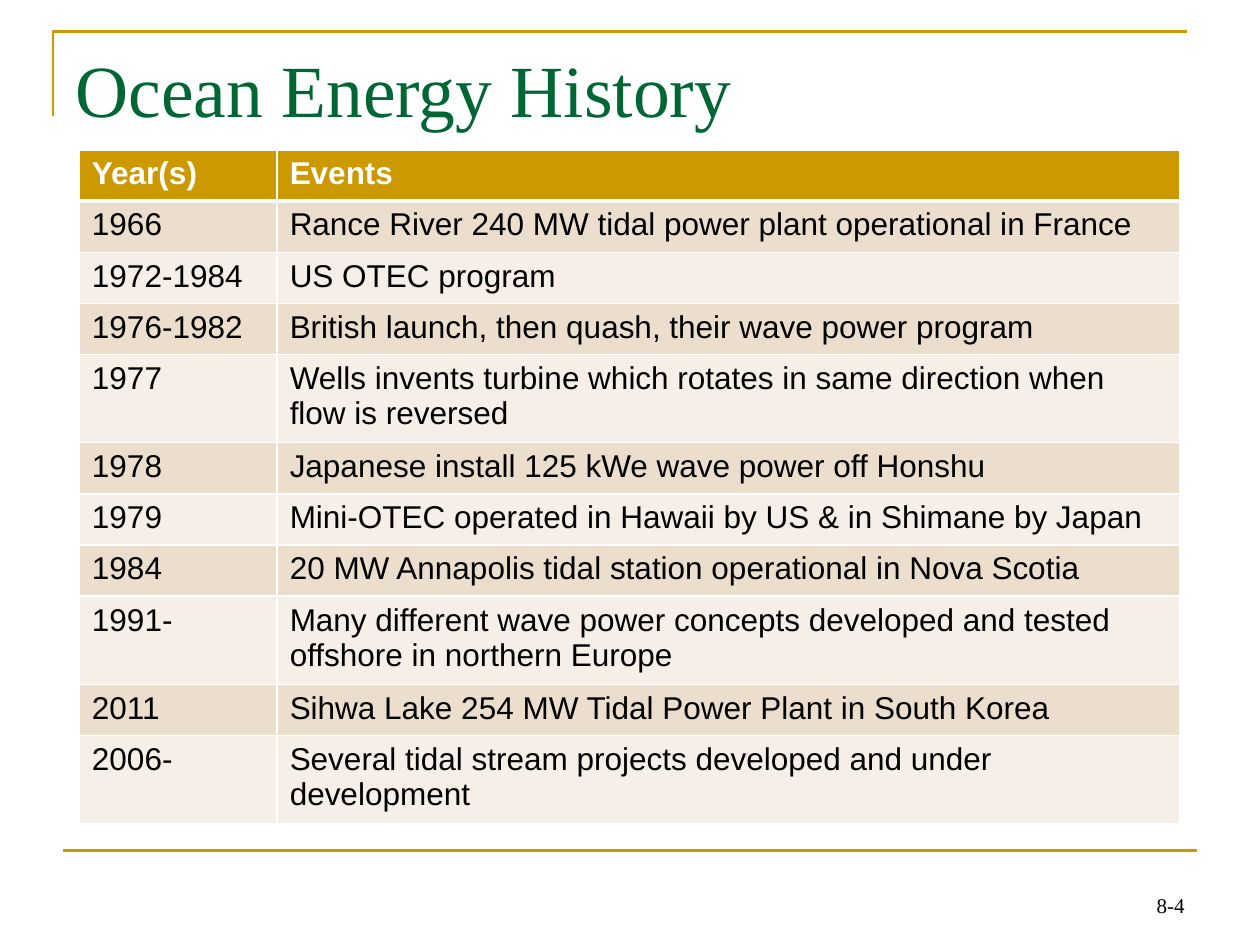
"""Build the Ocean Energy History slide with its framed title and event table."""
from lxml import etree
from pptx import Presentation
from pptx.dml.color import RGBColor
from pptx.enum import shapes, text
from pptx.oxml import ns
from pptx.util import Inches, Pt

GOLD = RGBColor(0xCC, 0x99, 0x00)
GREEN = RGBColor(0x00, 0x66, 0x33)
WHITE = RGBColor(0xFF, 0xFF, 0xFF)
BLACK = RGBColor(0x00, 0x00, 0x00)
BANDS = [RGBColor(0xF6, 0xEF, 0xE7), RGBColor(0xEC, 0xDE, 0xCC)]

EVENTS = [
    ("Year(s)", "Events"),
    ("1966", "Rance River 240 MW tidal power plant operational in France"),
    ("1972-1984", "US OTEC program"),
    ("1976-1982", "British launch, then quash, their wave power program"),
    ("1977", "Wells invents turbine which rotates in same direction when flow is reversed"),
    ("1978", "Japanese install 125 kWe wave power off Honshu"),
    ("1979", "Mini-OTEC operated in Hawaii by US & in Shimane by Japan"),
    ("1984", "20 MW Annapolis tidal station operational in Nova Scotia"),
    ("1991-", "Many different wave power concepts developed and tested offshore in northern Europe"),
    ("2011", "Sihwa Lake 254 MW Tidal Power Plant in South Korea"),
    ("2006-", "Several tidal stream projects developed and under development"),
]
TWO_LINE_YEARS = ("1977", "1991-", "2006-")


def write(tf, content, color, frame, font):
    for name, value in frame.items():
        setattr(tf, name, value)
    p = tf.paragraphs[0]
    r = p.add_run()
    r.text = content
    for name, value in font.items():
        setattr(r.font, name, value)
    r.font.color.rgb = color
    return p


def add_borders(cell, widths):
    tcPr = cell._tc.get_or_add_tcPr()
    for i, (side, width) in enumerate(widths.items()):
        ln = etree.Element(ns.qn(f"a:ln{side}"), w=str(Pt(width)))
        fill = etree.SubElement(ln, ns.qn("a:solidFill"))
        etree.SubElement(fill, ns.qn("a:srgbClr"), val=str(WHITE))
        tcPr.insert(i, ln)


prs = Presentation()
prs.slide_width, prs.slide_height = Inches(10), Inches(7.5)
s = prs.slides.add_slide(prs.slide_layouts[5])

fb = s.shapes.build_freeform(Inches(0.42), Inches(0.92))
fb.add_line_segments([(Inches(0.42), Inches(0.25)), (Inches(9.42), Inches(0.25))], close=False)
corner = fb.convert_to_shape()
corner.shadow.inherit = False
corner.fill.background()
rule = s.shapes.add_connector(
    shapes.MSO_CONNECTOR.STRAIGHT, Inches(0.5), Inches(6.75), Inches(9.5), Inches(6.75))
etree.SubElement(rule._element.spPr, ns.qn("a:effectLst"))
for sp in (corner, rule):
    sp.line.color.rgb = GOLD
    sp.line.width = Pt(1.5)

title = s.shapes.title
title.left, title.top, title.width, title.height = map(Inches, (0.5, 0.3, 9, 1.25))
p = write(title.text_frame, "Ocean Energy History", GREEN,
          {"vertical_anchor": text.MSO_ANCHOR.TOP, "word_wrap": True,
           "auto_size": text.MSO_AUTO_SIZE.NONE},
          {"name": "Times New Roman", "size": Pt(42)})
p.alignment = text.PP_ALIGN.LEFT

table = s.shapes.add_table(
    len(EVENTS), 2, Inches(0.63), Inches(1.19), Inches(8.73), Inches(5.35)).table
for column, width in zip(table.columns, (1.57, 7.16)):
    column.width = Inches(width)
tall = 0.7
short = (5.35 - tall * len(TWO_LINE_YEARS)) / (len(EVENTS) - len(TWO_LINE_YEARS))
for i, event in enumerate(EVENTS):
    header = i == 0
    table.rows[i].height = Inches(tall if event[0] in TWO_LINE_YEARS else short)
    for j, content in enumerate(event):
        cell = table.cell(i, j)
        cell.fill.solid()
        cell.fill.fore_color.rgb = GOLD if header else BANDS[i % 2]
        add_borders(cell, {"L": 1, "R": 1, "T": 3 if i == 1 else 1, "B": 3 if header else 1})
        write(cell.text_frame, content, WHITE if header else BLACK, {},
              {"name": "Arial", "size": Pt(18), "bold": header})

number = s.shapes.add_textbox(Inches(7.17), Inches(6.83), Inches(2.33), Inches(0.5))
p = write(number.text_frame, "8-4", BLACK,
          {"vertical_anchor": text.MSO_ANCHOR.BOTTOM, "word_wrap": True},
          {"name": "Times New Roman", "size": Pt(12)})
p.alignment = text.PP_ALIGN.RIGHT

prs.save("out.pptx")
